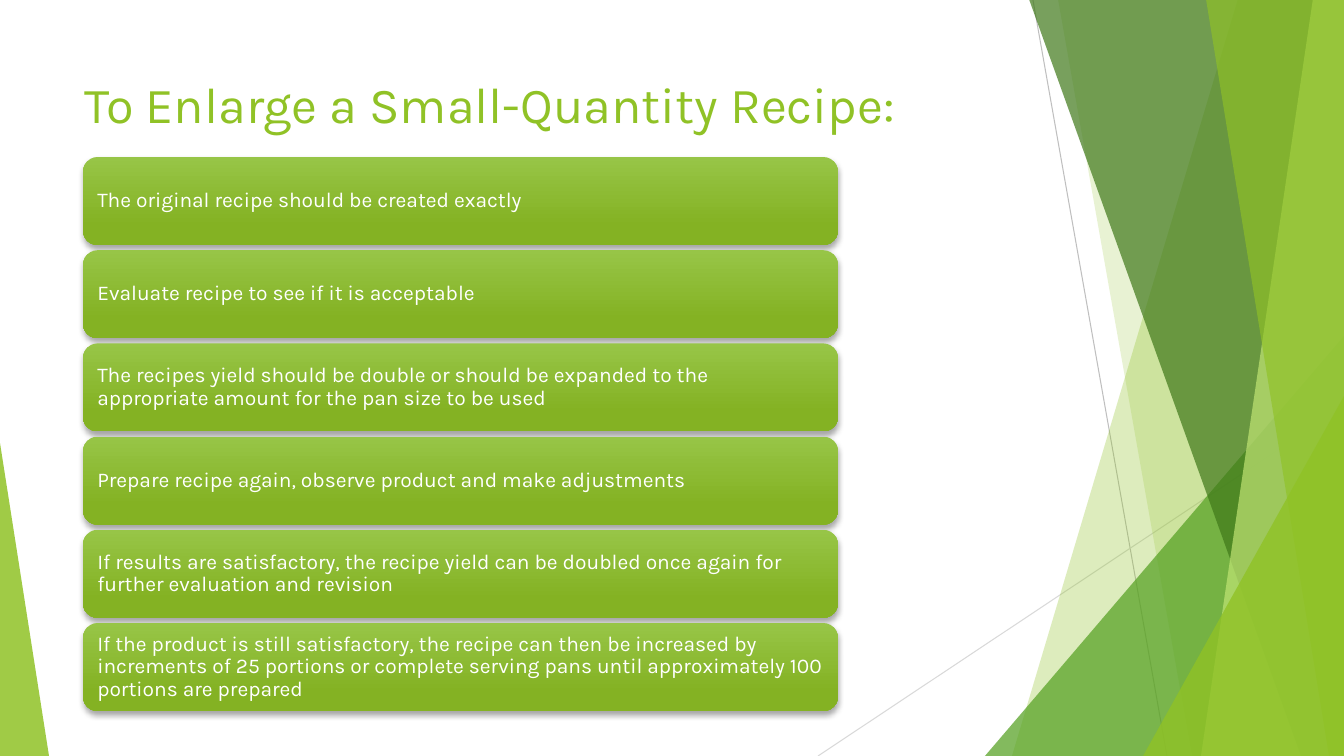
from lxml import etree
from pptx import Presentation
from pptx import util as u
from pptx.dml.color import RGBColor
from pptx.enum import shapes, text
from pptx.oxml.ns import qn

PX = 12192000 / 1344
WIDTH, HEIGHT = 1344, 756
FONT = "Karla"

WHITE = RGBColor(0xFF, 0xFF, 0xFF)
LIME = RGBColor(0x90, 0xC2, 0x26)
PALE_LIME = RGBColor(0xC0, 0xE4, 0x74)
GREEN = RGBColor(0x54, 0xA0, 0x21)
DARK_GREEN = RGBColor(0x3F, 0x78, 0x19)
CARD_TOP = RGBColor(0x97, 0xC5, 0x47)
CARD_BOTTOM = RGBColor(0x84, 0xB2, 0x23)
GREY = RGBColor(0xBF, 0xBF, 0xBF)
LIGHT_GREY = RGBColor(0xD9, 0xD9, 0xD9)


def px(*lengths):
    return [u.Emu(round(length * PX)) for length in lengths]


def write(shape, words, size, color):
    frame = shape.text_frame
    frame.word_wrap = True
    frame.text = words
    paragraph = frame.paragraphs[0]
    paragraph.alignment = text.PP_ALIGN.LEFT
    font = paragraph.runs[0].font
    font.name, font.size = FONT, u.Pt(size)
    font.color.rgb = color
    return paragraph


presentation = Presentation()
presentation.slide_width, presentation.slide_height = px(WIDTH, HEIGHT)
slide = presentation.slides.add_slide(presentation.slide_layouts[6])

# Thin lines behind the facets
for ends, color in [((1033, 0, 1167, HEIGHT), GREY),
                    ((WIDTH, 406, 818, HEIGHT), LIGHT_GREY)]:
    line = slide.shapes.add_connector(shapes.MSO_CONNECTOR.STRAIGHT, *px(*ends))
    line.line.color.rgb = color
    line.line.width = u.Pt(0.75)
    etree.SubElement(line._element.spPr, qn("a:effectLst"))

# Translucent facets: a band runs from its top-left x to its bottom-left x and
# fills to the right edge; a triangle has a box and the place of its apex
facets = [
    ("band", (1238, 1012), LIME, 30),
    ("band", (1058, 1192), LIME, 20),
    ("triangle", (985, 336, 359, 420, 1), GREEN, 72),
    ("band", (1029, 1301), DARK_GREEN, 70),
    ("band", (1313, 1201), PALE_LIME, 70),
    ("band", (1206, 1329), LIME, 65),
    ("triangle", (1143, 396, 201, 360, 1), LIME, 80),
    ("triangle", (0, 443, 49, 313, 0), LIME, 85),
]
for kind, geometry, color, opacity in facets:
    if kind == "band":
        top_x, bottom_x = geometry
        builder = slide.shapes.build_freeform(top_x, -1, scale=PX)
        builder.add_line_segments([(WIDTH, -1), (WIDTH, HEIGHT), (bottom_x, HEIGHT)])
        facet = builder.convert_to_shape()
    else:
        *box, apex = geometry
        facet = slide.shapes.add_shape(shapes.MSO_SHAPE.ISOSCELES_TRIANGLE, *px(*box))
        facet.adjustments[0] = apex
    facet.shadow.inherit = False
    facet.line.fill.background()
    facet.fill.solid()
    facet.fill.fore_color.rgb = color
    fill_color = facet._element.spPr.find(".//" + qn("a:srgbClr"))
    etree.SubElement(fill_color, qn("a:alpha"), val=str(opacity * 1000))

# Title
title = slide.shapes.add_textbox(*px(75, 68, 948, 145))
write(title, "To Enlarge a Small-Quantity Recipe:", 36, LIME)

# Step cards, evenly spread from the first top to the last
steps = [
    "The original recipe should be created exactly",
    "Evaluate recipe to see if it is acceptable",
    "The recipes yield should be double or should be expanded to the appropriate "
    "amount for the pan size to be used",
    "Prepare recipe again, observe product and make adjustments",
    "If results are satisfactory, the recipe yield can be doubled once again for "
    "further evaluation and revision",
    "If the product is still satisfactory, the recipe can then be increased by "
    "increments of 25 portions or complete serving pans until approximately 100 "
    "portions are prepared",
]
FIRST_TOP, LAST_TOP = 157, 623
for index, step in enumerate(steps):
    top = FIRST_TOP + (LAST_TOP - FIRST_TOP) * index / (len(steps) - 1)
    card = slide.shapes.add_shape(shapes.MSO_SHAPE.ROUNDED_RECTANGLE, *px(83, top, 755, 88))
    card.line.fill.background()
    card.fill.gradient()
    card.fill.gradient_angle = 270
    stops = card.fill.gradient_stops
    for stop, position, color in zip(stops, (0, 0.78), (CARD_TOP, CARD_BOTTOM)):
        stop.position = position
        stop.color.rgb = color

    # Soft shadow below the card
    card.shadow.inherit = False
    effects = card._element.spPr.find(qn("a:effectLst"))
    shadow = etree.SubElement(effects, qn("a:outerShdw"), blurRad=str(u.Pt(4)),
                              dist=str(u.Pt(3)), dir="5400000", rotWithShape="0")
    shadow_color = etree.SubElement(shadow, qn("a:srgbClr"), val="000000")
    etree.SubElement(shadow_color, qn("a:alpha"), val="35000")

    frame = card.text_frame
    frame.margin_left, frame.margin_right, frame.margin_top, frame.margin_bottom = px(10, 10, 6, 6)
    frame.vertical_anchor = text.MSO_ANCHOR.MIDDLE
    write(card, step, 15, WHITE).line_spacing = 0.9

presentation.save("out.pptx")
